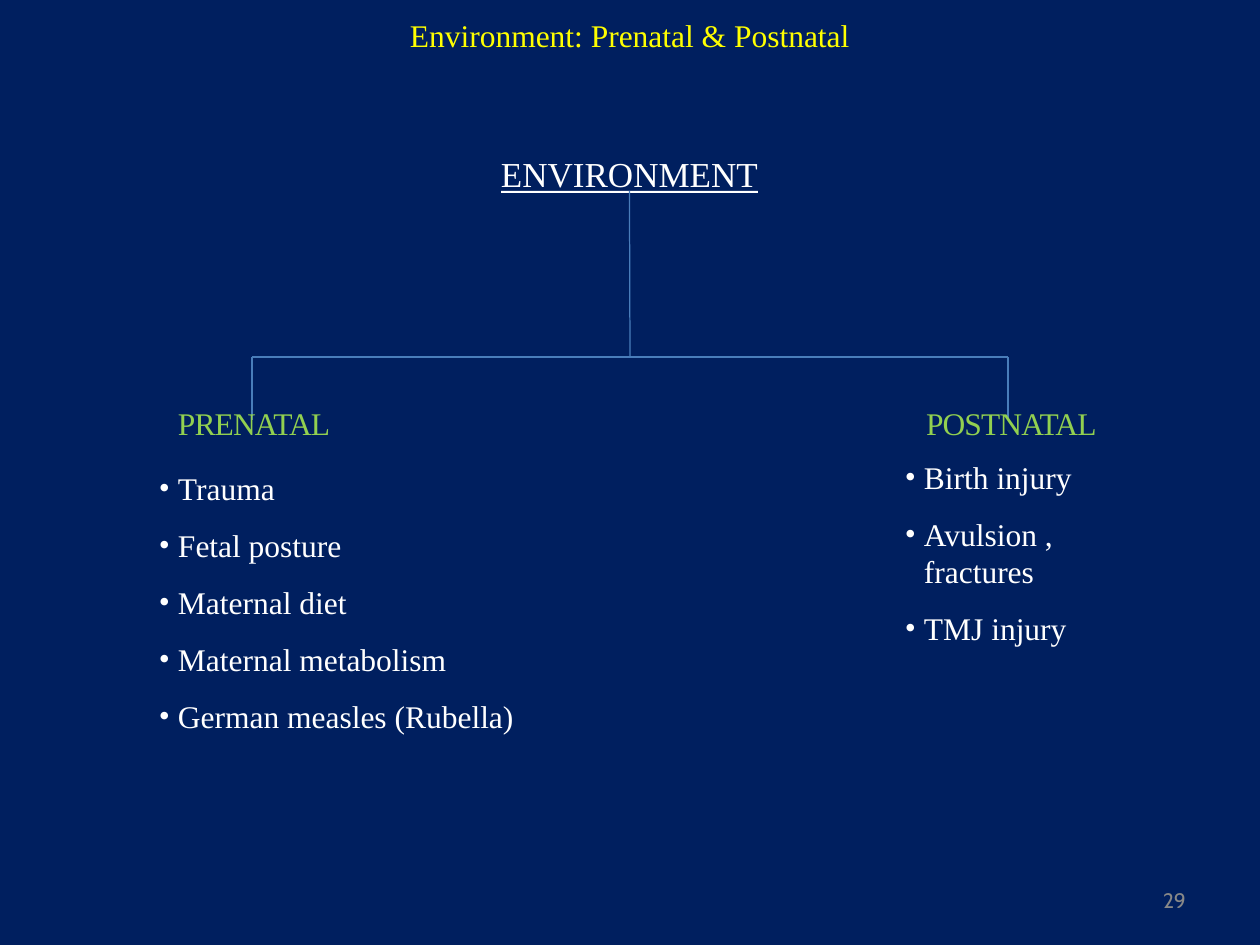
from lxml import etree
from pptx import Presentation
from pptx.dml.color import RGBColor
from pptx.enum.shapes import MSO_CONNECTOR, MSO_SHAPE
from pptx.oxml.ns import qn
from pptx.util import Emu, Pt

STRAIGHT = MSO_CONNECTOR.STRAIGHT
RECTANGLE = MSO_SHAPE.RECTANGLE
NAVY = RGBColor(0x00, 0x1F, 0x5F)
YELLOW = RGBColor(0xFF, 0xFF, 0x00)
WHITE = RGBColor(0xFF, 0xFF, 0xFF)
GREEN = RGBColor(0x92, 0xD0, 0x50)
BLUE = RGBColor(0x49, 0x7D, 0xBA)
GREY = RGBColor(0x88, 0x88, 0x88)
SERIF = "Times New Roman"
LINE_WIDTH = Pt(0.72)


def px(n):
    return Emu(round(n * 914400 / 126))


def add_text(s, box, lines, size=18, color=WHITE, font=SERIF, top=1, left=1,
             before=1, spacing=0, bullet=False, line=None):
    tf = s.shapes.add_textbox(*map(px, box)).text_frame
    tf.word_wrap = True
    tf.margin_left = tf.margin_right = tf.margin_bottom = 0
    tf.margin_top = px(top)
    for i, text in enumerate(lines):
        p = tf.paragraphs[0] if i == 0 else tf.add_paragraph()
        p.space_before = Pt(before)
        if line:
            p.line_spacing = Pt(line)
        pPr = p._p.get_or_add_pPr()
        pPr.set("marL", str(px(left)))
        if bullet:
            pPr.set("indent", str(px(-19)))
            etree.SubElement(pPr, qn("a:buFont"), typeface=font)
            etree.SubElement(pPr, qn("a:buChar"), char="•")
        r = p.add_run()
        r.text = text
        r.font.name, r.font.size = font, Pt(size)
        r.font.color.rgb = color
        if spacing:
            r._r.get_or_add_rPr().set("spc", str(spacing))


def add_block(s, box, color):
    sp = s.shapes.add_shape(RECTANGLE, *map(px, box))
    sp.shadow.inherit = False
    sp.fill.solid()
    sp.fill.fore_color.rgb = color
    sp.line.fill.background()
    return sp


def add_line(s, x1, y1, x2, y2):
    c = s.shapes.add_connector(STRAIGHT, *map(px, (x1, y1, x2, y2)))
    c.line.color.rgb = BLUE
    c.line.width = LINE_WIDTH
    etree.SubElement(c._element.spPr, qn("a:effectLst"))
    return c


def add_root(s, x, y, w, text):
    add_text(s, (x, y, w, 45), [text], size=20)
    return add_block(s, (x + 1, y + 40, w - 3, 2), WHITE)


def add_drops(s, x, y, w, h):
    fb = s.shapes.build_freeform(px(x), px(y + h))
    fb.add_line_segments([(px(x), px(y))], close=False)
    fb.move_to(px(x + w), px(y + h))
    fb.add_line_segments([(px(x + w), px(y))], close=False)
    sp = fb.convert_to_shape()
    sp.shadow.inherit = False
    sp.fill.background()
    sp.line.color.rgb = BLUE
    sp.line.width = LINE_WIDTH


def add_tree(s, x, y, w, h, drop, root):
    middle, rail = x + w // 2, y + h - drop
    stem = add_line(s, middle, y, middle, rail)
    stem.begin_connect(root, 0)
    add_line(s, x, rail, x + w, rail)
    add_drops(s, x, rail, w, drop)


def add_branch(s, x, y, w, h, heading, items, heading_dx, list_dy, before):
    add_text(s, (x + heading_dx, y, 182, 42), [heading], color=GREEN, spacing=-50)
    add_text(s, (x, y + list_dy, w, h - list_dy), items, top=20, left=20,
             before=before, bullet=True)


def main():
    prs = Presentation()
    prs.slide_width, prs.slide_height = px(1260), px(945)
    s = prs.slides.add_slide(prs.slide_layouts[6])

    add_block(s, (0, 0, 1260, 945), NAVY)
    add_text(s, (409, 15, 444, 42), ["Environment: Prenatal & Postnatal"], color=YELLOW)
    root = add_root(s, 500, 151, 260, "ENVIRONMENT")
    add_tree(s, 252, 191, 756, 229, 63, root)
    add_branch(s, 158, 403, 358, 337, "PRENATAL",
               ["Trauma", "Fetal posture", "Maternal diet",
                "Maternal metabolism", "German measles (Rubella)"], 19, 46, 11)
    add_branch(s, 904, 403, 205, 247, "POSTNATAL",
               ["Birth injury", "Avulsion , fractures", "TMJ injury"], 21, 35, 10.8)
    add_text(s, (1158, 891, 32, 24), ["29"], size=12, color=GREY, font="Cabin",
             top=0, left=5, before=0, line=12.4)
    prs.save("out.pptx")


if __name__ == "__main__":
    main()
